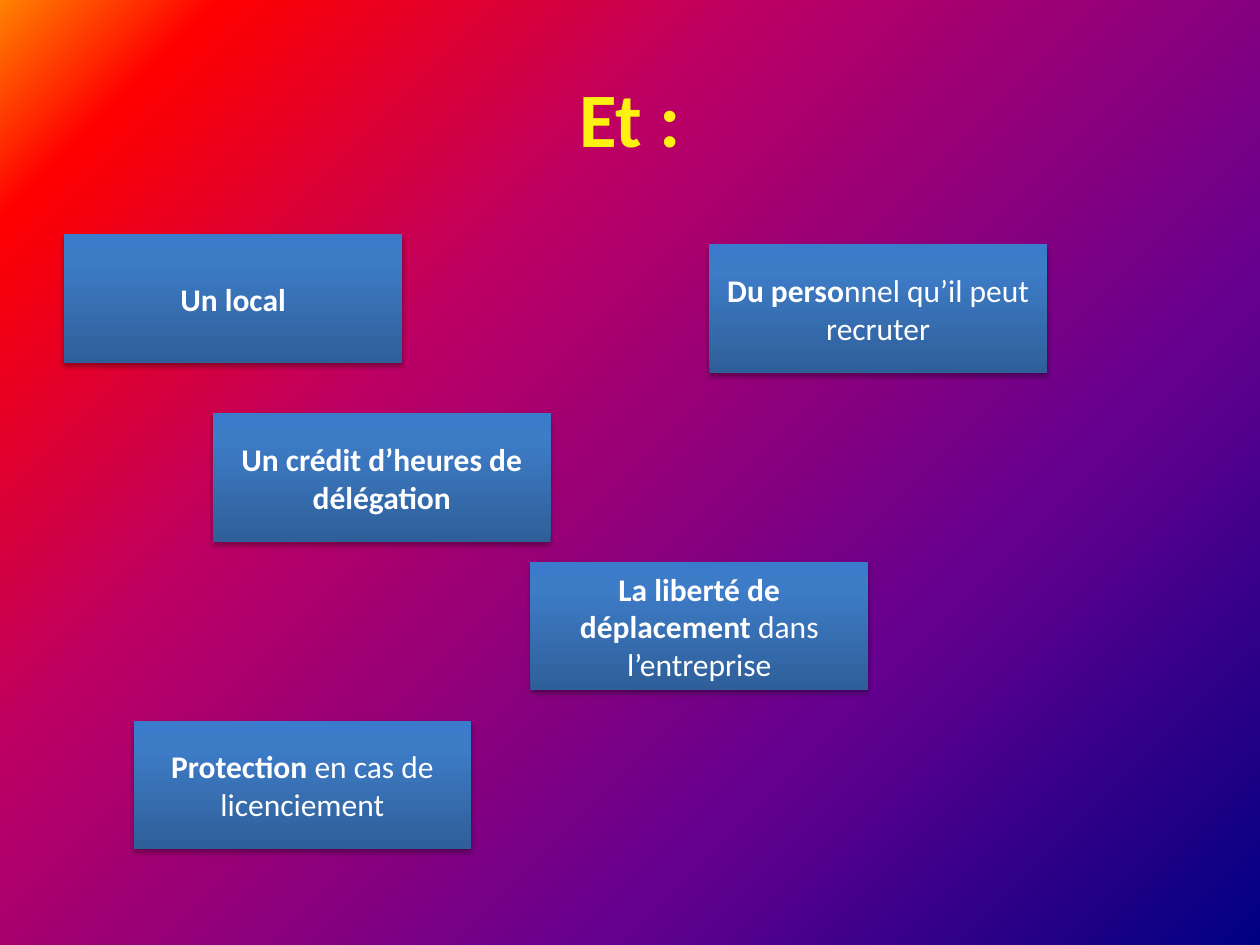
from pptx import Presentation
from pptx.dml.color import RGBColor
from pptx.enum.shapes import MSO_SHAPE
from pptx.enum.text import MSO_ANCHOR, PP_ALIGN
from pptx.oxml import parse_xml
from pptx.oxml.ns import nsdecls
from pptx.util import Inches, Pt

RECTANGLE = MSO_SHAPE.RECTANGLE
MIDDLE = MSO_ANCHOR.MIDDLE
CENTER = PP_ALIGN.CENTER

COLORS = {
    "title": "FCF110", "text": "FFFFFF", "shadow": "000000",
    "navy": "000082", "purple": "66008F", "magenta": "BA0066",
    "red": "FF0000", "orange": "FF8200",
    "dark": "2F5F99", "mid": "3D7CC7", "light": "3A7CCB",
}
FONT = "Calibri"
BACKGROUND_STOPS = [(0, "navy"), (30, "purple"), (65, "magenta"), (90, "red"), (100, "orange")]
CARD_STOPS = [(0, "dark"), (80, "mid"), (100, "light")]
RADIAL = '<a:path path="circle"><a:fillToRect l="100000" t="100000"/></a:path>'
UPWARD = '<a:lin ang="16200000" scaled="0"/>'

TITLE = "Et :"
CARD_SIZE = (2.68, 1.02)
CARDS = [
    (0.51, 1.86, "Un local", ""),
    (1.69, 3.28, "Un crédit d’heures de délégation", ""),
    (4.21, 4.46, "La liberté de déplacement ", "dans l’entreprise"),
    (5.63, 1.94, "Du perso", "nnel qu’il peut recruter"),
    (1.06, 5.72, "Protection", " en cas de licenciement"),
]


def set_gradient(fill, element, stops, direction):
    fill.gradient()
    old = element.xpath(".//a:gradFill")[0]
    marks = "".join(
        f'<a:gs pos="{position * 1000}"><a:srgbClr val="{COLORS[name]}"/></a:gs>'
        for position, name in stops
    )
    new = parse_xml(
        f'<a:gradFill {nsdecls("a")} rotWithShape="1">'
        f"<a:gsLst>{marks}</a:gsLst>{direction}</a:gradFill>"
    )
    old.getparent().replace(old, new)


def add_shadow(shape):
    shape.shadow.inherit = False
    effects = shape.element.spPr.xpath("./a:effectLst")[0]
    effects.append(parse_xml(
        f'<a:outerShdw {nsdecls("a")} blurRad="{Pt(3.1)}" dist="{Pt(1.8)}" '
        f'dir="5400000" rotWithShape="0"><a:srgbClr val="{COLORS["shadow"]}">'
        '<a:alpha val="35000"/></a:srgbClr></a:outerShdw>'
    ))


def write_text(shape, bold_text, plain_text="", size=18, color="text"):
    frame = shape.text_frame
    frame.word_wrap = True
    frame.vertical_anchor = MIDDLE
    para = frame.paragraphs[0]
    para.alignment = CENTER
    for text, bold in ((bold_text, True), (plain_text, False)):
        if text:
            span = para.add_run()
            span.text = text
            span.font.name = FONT
            span.font.size = Pt(size)
            span.font.bold = bold
            span.font.color.rgb = RGBColor.from_string(COLORS[color])


def add_card(page, left, top, bold_text, plain_text):
    box = page.shapes.add_shape(RECTANGLE, *map(Inches, (left, top, *CARD_SIZE)))
    set_gradient(box.fill, box.element.spPr, CARD_STOPS, UPWARD)
    box.line.fill.background()
    add_shadow(box)
    write_text(box, bold_text, plain_text)


def main():
    deck = Presentation()
    deck.slide_width, deck.slide_height = Inches(10), Inches(7.5)
    page = deck.slides.add_slide(deck.slide_layouts[6])
    set_gradient(page.background.fill, page.element, BACKGROUND_STOPS, RADIAL)
    title = page.shapes.add_textbox(*map(Inches, (0.5, 0.3, 9, 1.25)))
    write_text(title, TITLE, size=44, color="title")
    for card in CARDS:
        add_card(page, *card)
    deck.save("out.pptx")


if __name__ == "__main__":
    main()
